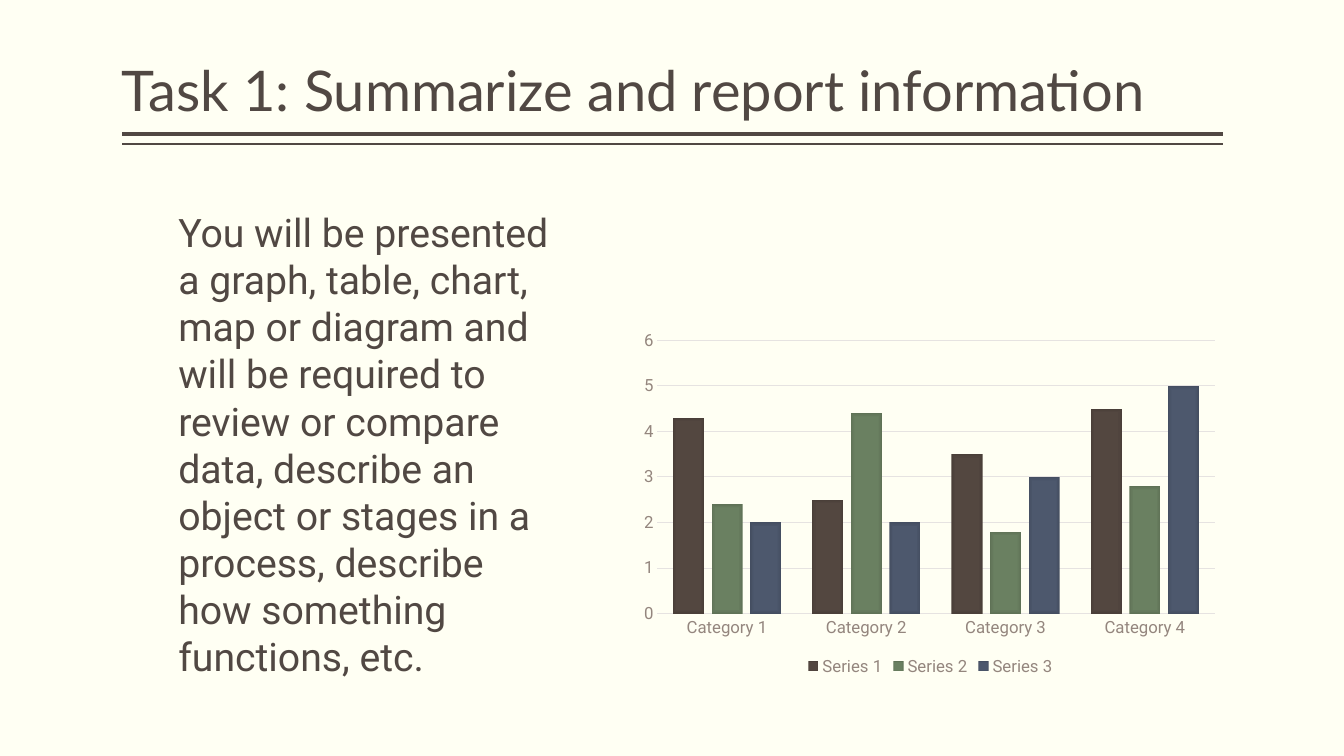
"""Build a slide with a ruled title, a paragraph and a clustered column chart."""
from dataclasses import dataclass

import pptx
import pptx.chart.data
import pptx.dml.color
import pptx.enum.chart
import pptx.enum.shapes
import pptx.enum.text
import pptx.oxml
import pptx.oxml.ns
import pptx.util

Pt = pptx.util.Pt
qn = pptx.oxml.ns.qn
XL = pptx.enum.chart
ANCHOR = pptx.enum.text.MSO_ANCHOR
COLORS = {"paper": "FFFFF3", "ink": "514843", "label": "94867E", "grid": "E6E3E1"}
NS = pptx.oxml.ns.nsdecls("a", "c")
LEFT, WIDTH = 87.1, 786.2


@dataclass
class Rule:
    y: float
    weight: float


@dataclass
class Series:
    name: str
    values: tuple[float, ...]
    stops: tuple[str, str, str]


RULES = [Rule(95.8, 3), Rule(103, 1)]
CATEGORIES = [f"Category {i}" for i in range(1, 5)]
SERIES = [
    Series("Series 1", (4.3, 2.5, 3.5, 4.5), ("544740", "534740", "4A3F39")),
    Series("Series 2", (2.4, 4.4, 1.8, 2.8), ("6B8162", "6A8061", "5F7256")),
    Series("Series 3", (2, 2, 3, 5), ("4E596E", "4D586D", "444E61")),
]
TITLE = "Task 1: Summarize and report information"
BODY = ("You will be presented a graph, table, chart, map or diagram and will be "
        "required to review or compare data, describe an object or stages in a "
        "process, describe how something functions, etc.")


def rgb(name: str) -> pptx.dml.color.RGBColor:
    """Return the named colour."""
    return pptx.dml.color.RGBColor.from_string(COLORS[name])


def set_font(font, *, size: float, name: str = "Roboto", color: str = "ink") -> None:
    """Format a font."""
    font.size, font.name = Pt(size), name
    font.color.rgb = rgb(color)


def write(sp, text: str, *, box: tuple, size: float, name: str, anchor,
          inset: float, spacing: float) -> None:
    """Place a placeholder and fill it with one plain left-aligned paragraph."""
    sp.left, sp.top, sp.width, sp.height = map(Pt, box)
    tf = sp.text_frame
    tf.word_wrap, tf.vertical_anchor = True, anchor
    tf.auto_size = pptx.enum.text.MSO_AUTO_SIZE.NONE
    tf.margin_left = tf.margin_right = Pt(inset)
    tf.margin_top = tf.margin_bottom = Pt(3.6)
    p = tf.paragraphs[0]
    p.alignment = pptx.enum.text.PP_ALIGN.LEFT
    p.line_spacing, p.space_before = spacing, Pt(0)
    pPr = p._p.get_or_add_pPr()
    pPr.set("marL", "0")
    pPr.set("indent", "0")
    pPr.append(pptx.oxml.parse_xml(f"<a:buNone {NS}/>"))
    r = p.add_run()
    r.text = text
    set_font(r.font, size=size, name=name)


def add_rule(s, rule: Rule) -> None:
    """Draw a horizontal line under the title."""
    line = s.shapes.add_connector(pptx.enum.shapes.MSO_CONNECTOR.STRAIGHT,
                                  Pt(LEFT + WIDTH), Pt(rule.y), Pt(LEFT), Pt(rule.y))
    line.line.color.rgb, line.line.width = rgb("ink"), Pt(rule.weight)
    line._element.spPr.append(pptx.oxml.parse_xml(f"<a:effectLst {NS}/>"))


def fill_gradient(series, stops: tuple[str, str, str]) -> None:
    """Give a series a rectangular gradient from its centre."""
    series.format.fill.solid()
    spPr = series._element.find(qn("c:spPr"))
    marks = "".join(f'<a:gs pos="{pos}000"><a:srgbClr val="{color}"/></a:gs>'
                    for pos, color in zip((0, 71, 100), stops))
    gradient = pptx.oxml.parse_xml(
        f'<a:gradFill {NS} rotWithShape="1"><a:gsLst>{marks}</a:gsLst>'
        '<a:path path="rect"><a:fillToRect l="50000" t="50000" r="50000" b="50000"/>'
        '</a:path></a:gradFill>')
    spPr.replace(spPr.find(qn("a:solidFill")), gradient)


def set_plot_area(chart, **frame: float) -> None:
    """Fix the inner plot area as fractions of the chart."""
    area = chart._chartSpace.find(".//" + qn("c:plotArea"))
    for old in area.findall(qn("c:layout")):
        area.remove(old)
    modes = '<c:xMode val="edge"/><c:yMode val="edge"/>'
    sizes = "".join(f'<c:{key} val="{value}"/>' for key, value in frame.items())
    area.insert(0, pptx.oxml.parse_xml(
        f'<c:layout {NS}><c:manualLayout><c:layoutTarget val="inner"/>'
        f'{modes}{sizes}</c:manualLayout></c:layout>'))


def add_columns(s) -> None:
    """Add the column chart."""
    data = pptx.chart.data.CategoryChartData()
    data.categories = CATEGORIES
    for item in SERIES:
        data.add_series(item.name, item.values)
    chart = s.shapes.add_chart(XL.XL_CHART_TYPE.COLUMN_CLUSTERED, Pt(455.8), Pt(193.7),
                               Pt(417.6), Pt(292.3), data).chart
    set_font(chart.font, size=10)
    chart.has_title = False
    chart.has_legend = True
    chart.legend.position = XL.XL_LEGEND_POSITION.BOTTOM
    chart.legend.include_in_layout = False
    set_font(chart.legend.font, size=12, color="label")
    plot = chart.plots[0]
    plot.gap_width, plot.overlap, plot.vary_by_categories = 100, -24, False
    for series, item in zip(plot.series, SERIES):
        fill_gradient(series, item.stops)
    for axis in (chart.category_axis, chart.value_axis):
        axis.major_tick_mark = axis.minor_tick_mark = XL.XL_TICK_MARK.NONE
        set_font(axis.tick_labels.font, size=12, color="label")
    base = chart.category_axis.format.line
    base.color.rgb, base.width = rgb("grid"), Pt(1)
    values = chart.value_axis
    values.minimum_scale, values.maximum_scale, values.major_unit = 0, 6, 1
    values.format.line.fill.background()
    grid = values.major_gridlines.format.line
    grid.color.rgb, grid.width = rgb("grid"), Pt(0.75)
    set_plot_area(chart, x=0.033, y=0.169, w=0.953, h=0.668)


def main() -> None:
    """Build and save the slide."""
    prs = pptx.Presentation()
    prs.slide_width, prs.slide_height = Pt(960), Pt(540)
    s = prs.slides.add_slide(prs.slide_layouts[1])
    s.background.fill.solid()
    s.background.fill.fore_color.rgb = rgb("paper")
    for rule in RULES:
        add_rule(s, rule)
    write(s.shapes.title, TITLE, box=(LEFT, 5.8, WIDTH, 86.4), size=40, name="Lato",
          anchor=ANCHOR.BOTTOM, inset=0, spacing=0.9)
    write(s.placeholders[1], BODY, box=(120.2, 145.4, 282.2, 346.3), size=28,
          name="Roboto", anchor=ANCHOR.TOP, inset=7.2, spacing=1.0)
    add_columns(s)
    prs.save("out.pptx")


if __name__ == "__main__":
    main()
